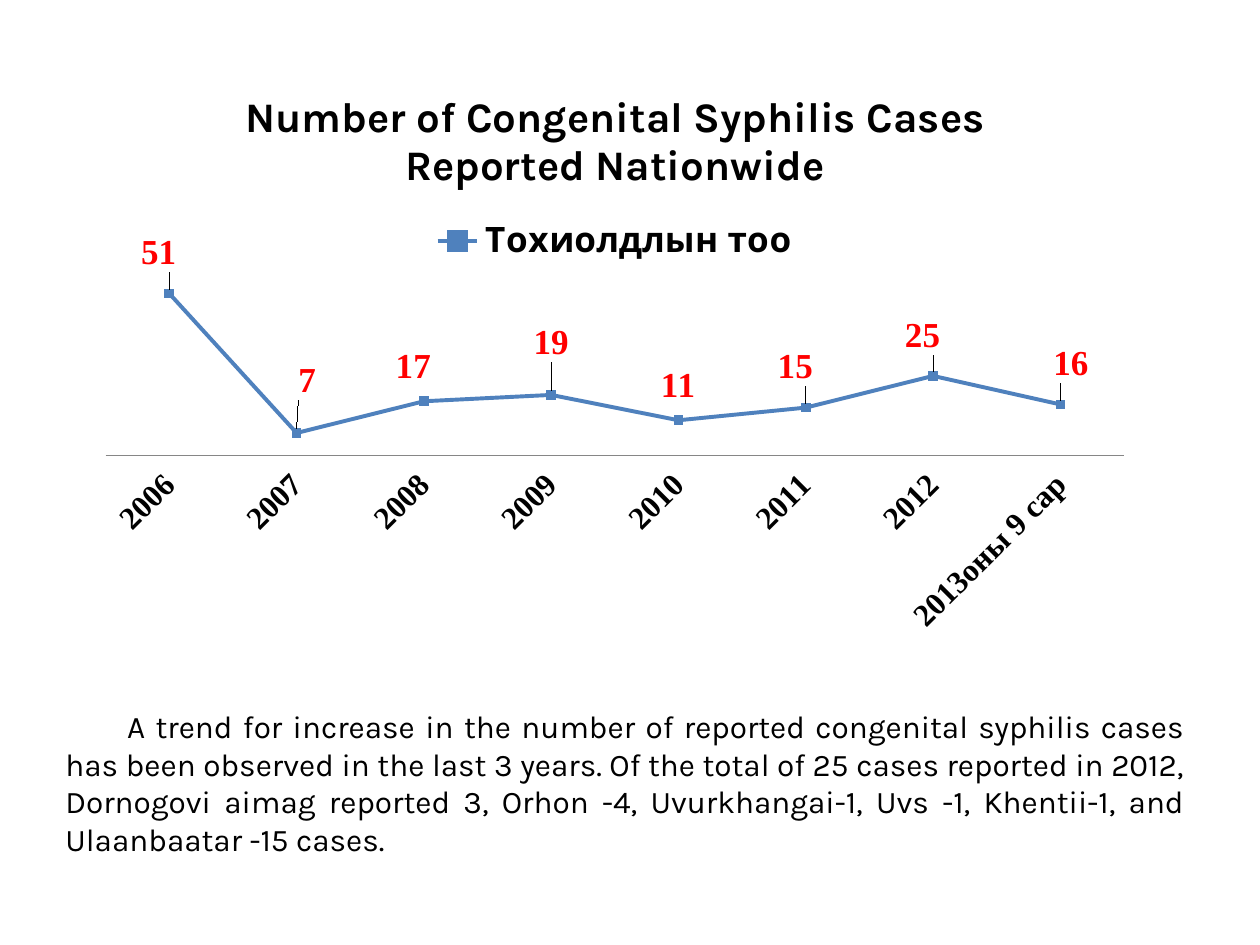
"""Build a slide with a line chart of yearly cases and a remark below it."""
from lxml.etree import SubElement as Sub
from pptx import Presentation
from pptx.chart.data import CategoryChartData as Data
from pptx.dml.color import RGBColor
from pptx.enum.chart import XL_CHART_TYPE as Kind, XL_LABEL_POSITION as Spot
from pptx.enum.chart import XL_LEGEND_POSITION as Side, XL_MARKER_STYLE as Mark
from pptx.enum.chart import XL_TICK_LABEL_POSITION as Tick, XL_TICK_MARK as Dash
from pptx.enum.text import MSO_ANCHOR as Anchor, PP_ALIGN as Align
from pptx.oxml import parse_xml
from pptx.oxml.ns import qn, nsdecls
from pptx.util import Inches, Pt


def style(text, words=None, face="Karla", size=20, bold=True, hue="000000"):
    if words:
        text.text = words
    font = text.font
    font.name, font.size, font.bold = face, Pt(size), bold
    font.color.rgb = RGBColor.from_string(hue)


def layout(**parts):
    tags = "".join(f'<c:{k} val="{v}"/>' for k, v in parts.items())
    return parse_xml(f"<c:layout {nsdecls('c')}><c:manualLayout>{tags}</c:manualLayout></c:layout>")


deck = Presentation()
deck.slide_width, deck.slide_height = Inches(10), Inches(7.5)
slide = deck.slides.add_slide(deck.slide_layouts[6])
wide, high = deck.slide_width, deck.slide_height
serif = "Times New Roman"

cases = [51, 7, 17, 19, 11, 15, 25, 16]
data = Data()
data.categories = [str(year) for year in range(2006, 2013)] + ["2013оны 9 сар"]
data.add_series("Тохиолдлын тоо", cases)
chart = slide.shapes.add_chart(
    Kind.LINE_MARKERS_STACKED, int(wide * 0.067), int(high * 0.067),
    int(wide * 0.842), int(high * 0.61), data).chart
style(chart, face=serif)

chart.has_title = True
head = chart.chart_title.text_frame.paragraphs[0]
style(head.add_run(), "Number of Congenital Syphilis Cases Reported Nationwide", size=24)

chart.has_legend = True
key = chart.legend
key.position, key.include_in_layout = Side.TOP, False
style(key)
key._element.find(qn("c:legendPos")).addnext(
    layout(xMode="edge", yMode="edge", x=0.63, y=0.32, w=0.36, h=0.1))

plot = chart.plots[0]
plot.vary_by_categories = False
area = chart._chartSpace.chart.plotArea
for old in area.findall(qn("c:layout")):
    area.remove(old)
area.insert(0, layout(layoutTarget="inner", xMode="edge", yMode="edge",
                      x=0.02, y=0.35, w=0.96, h=0.33))

years, scale = chart.category_axis, chart.value_axis
years.major_tick_mark = Dash.NONE
years.tick_label_position = Tick.LOW
years.format.line.color.rgb = RGBColor.from_string("868686")
style(years.tick_labels, face=serif, size=18)
years._element.find(qn("c:txPr")).find(qn("a:bodyPr")).set("rot", "-2700000")
scale.visible, scale.has_major_gridlines = False, False
scale.minimum_scale, scale.maximum_scale = 0, 60

line = plot.series[0]
line.smooth = False
blue = RGBColor.from_string("4F81BD")
line.format.line.color.rgb, line.format.line.width = blue, Pt(2.25)
line.marker.style, line.marker.size = Mark.SQUARE, 5
fill = line.marker.format.fill
fill.solid()
fill.fore_color.rgb = blue
line.marker.format.line.color.rgb = blue

tags = line.data_labels
tags.show_value, tags.position = True, Spot.ABOVE
style(tags, face=serif, hue="FF0000")
shifts = [(-0.01, -0.02), (0.01, -0.04), (-0.01, -0.01), (0, -0.04),
          (0, -0.01), (-0.01, -0.02), (-0.01, -0.02), (0.01, -0.02)]
for at, (x, y) in enumerate(shifts):
    tag = line.points[at].data_label
    style(tag, face=serif, hue="FF0000")
    tag.position = Spot.ABOVE
    tag._dLbl.insert(1, layout(x=x, y=y))

box = slide.shapes.add_textbox(int(wide * 0.042), int(high * 0.7), int(wide * 0.908), int(high * 0.256))
frame = box.text_frame
frame.word_wrap, frame.vertical_anchor = True, Anchor.MIDDLE
note = frame.paragraphs[0]
note.alignment = Align.JUSTIFY
stops = Sub(note._p.get_or_add_pPr(), qn("a:tabLst"))
Sub(stops, qn("a:tab"), pos=str(Inches(0.49)), algn="l")
style(note.add_run(), "\tA trend for increase in the number of reported congenital syphilis cases "
      "has been observed in the last 3 years. Of the total of 25 cases reported in 2012, "
      "Dornogovi aimag reported 3, Orhon -4, Uvurkhangai-1, Uvs -1, Khentii-1, "
      "and Ulaanbaatar -15 cases.", size=18, bold=False)

deck.save("out.pptx")
